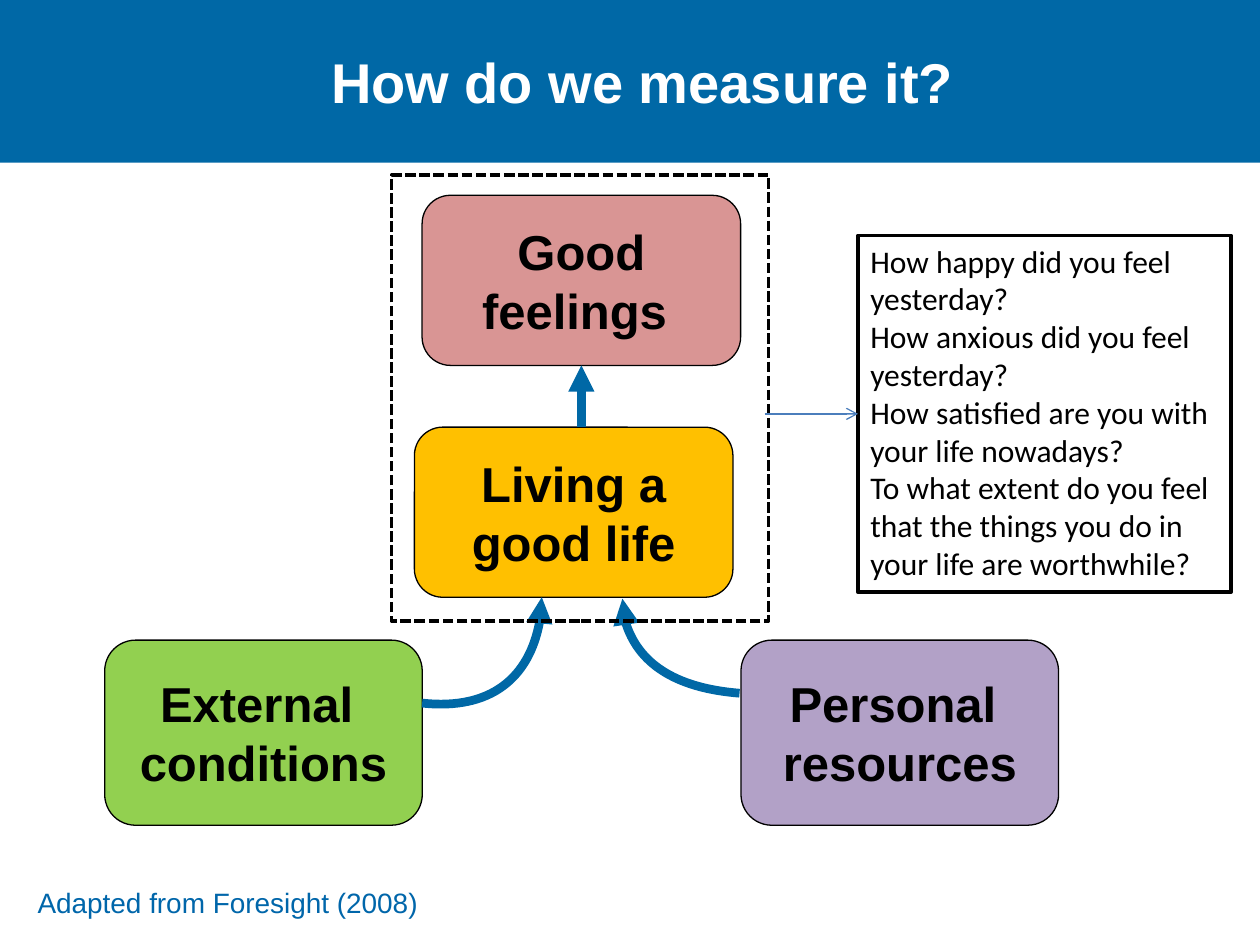
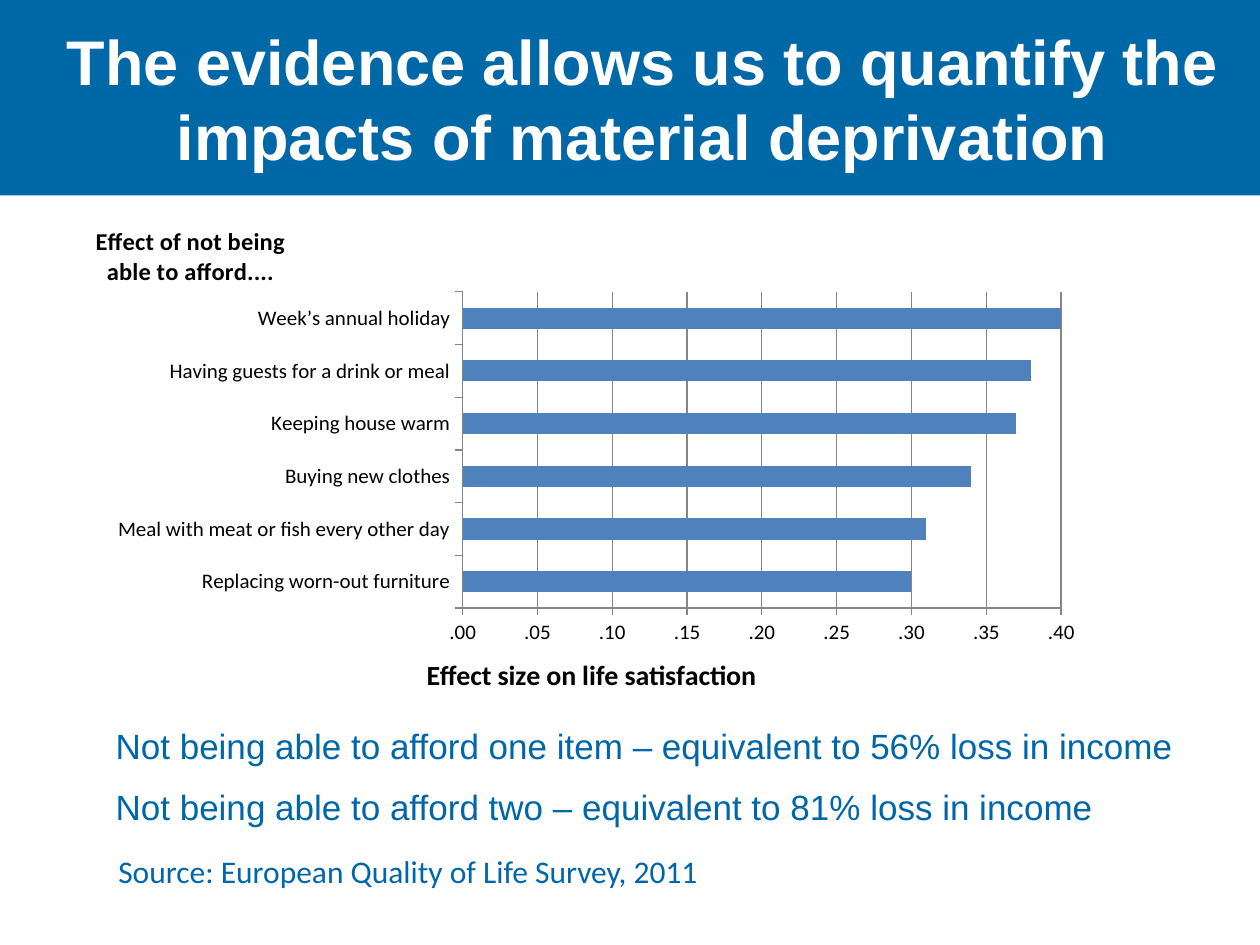
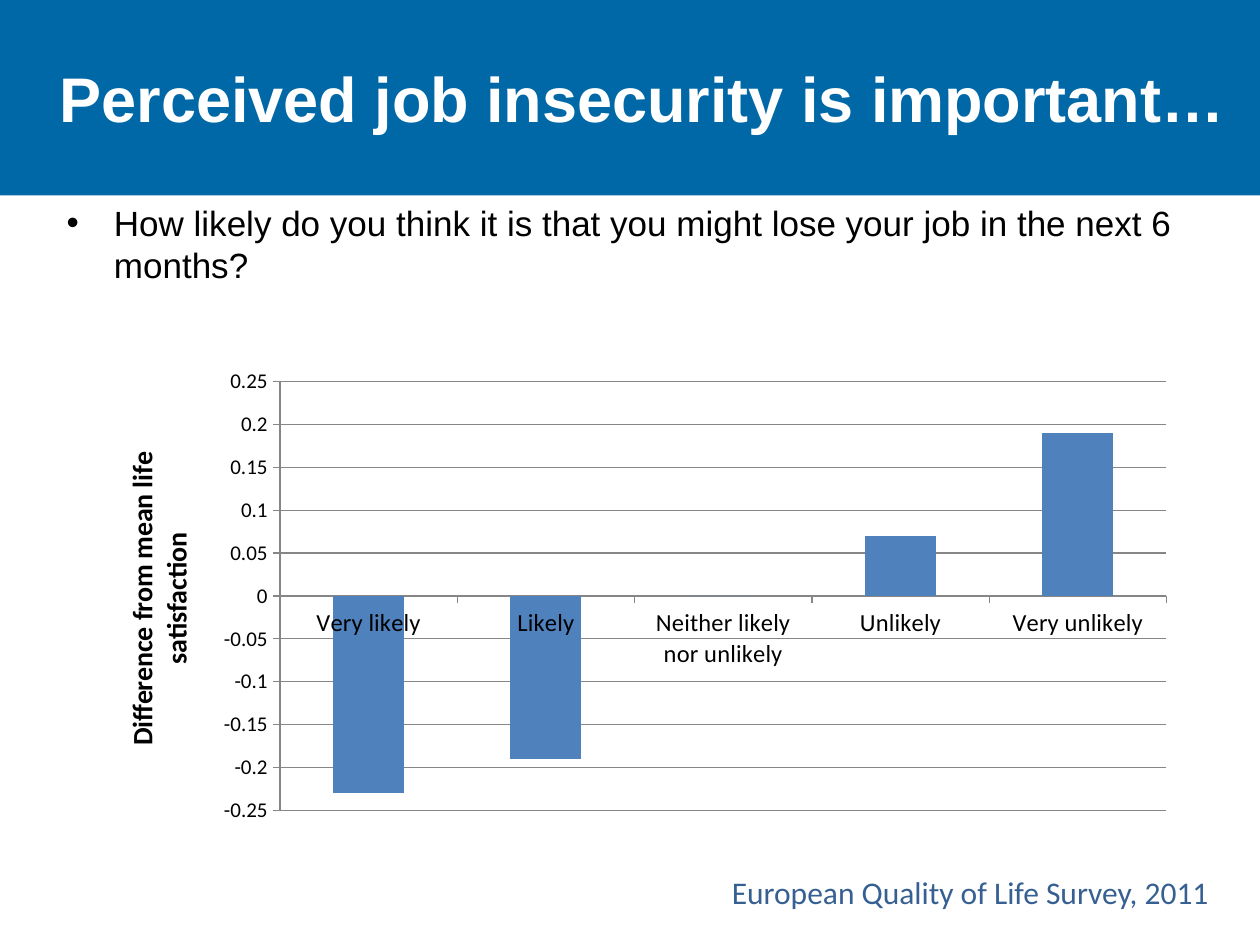
from lxml import etree
from pptx import Presentation
from pptx.chart.data import CategoryChartData
from pptx.dml.color import RGBColor
from pptx.enum.chart import XL_CHART_TYPE, XL_TICK_MARK
from pptx.enum.dml import MSO_LINE
from pptx.enum.shapes import MSO_CONNECTOR, MSO_SHAPE
from pptx.enum.text import MSO_ANCHOR, PP_ALIGN
from pptx.oxml.ns import qn
from pptx.util import Pt

RECT, ROUND = MSO_SHAPE.RECTANGLE, MSO_SHAPE.ROUNDED_RECTANGLE
STRAIGHT, DASH = MSO_CONNECTOR.STRAIGHT, MSO_LINE.SQUARE_DOT
TOP, MIDDLE = MSO_ANCHOR.TOP, MSO_ANCHOR.MIDDLE
LEFT, CENTER = PP_ALIGN.LEFT, PP_ALIGN.CENTER
BAR, COLUMN = XL_CHART_TYPE.BAR_CLUSTERED, XL_CHART_TYPE.COLUMN_CLUSTERED
OUTSIDE, NO_TICK = XL_TICK_MARK.OUTSIDE, XL_TICK_MARK.NONE

BAND, NOTE, SOURCE = "0068A6", "0066AA", "376092"
BLACK, WHITE, GRID, SERIES, LINK = "000000", "FFFFFF", "868686", "4F81BD", "4B7EBC"
HEAD = {"name": "Arial", "size": Pt(36), "bold": True}
BOX_FONT = {"name": "Arial", "size": Pt(28), "bold": True}
BODY = {"name": "Arial", "size": Pt(20)}
SMALL = {"name": "Calibri", "size": Pt(18)}
CENTERED = {"alignment": CENTER}


def rgb(value):
    """Turn a hex string into a colour."""
    return RGBColor.from_string(value)


def apply(target, values):
    """Set each named attribute on the target."""
    for name, value in values.items():
        setattr(target, name, value)


def write(sp, lines, font, color, para=None, frame=None):
    """Fill a shape with one paragraph per line."""
    tf = sp.text_frame
    apply(tf, {"word_wrap": True, **(frame or {})})
    for i, line in enumerate(lines):
        p = tf.add_paragraph() if i else tf.paragraphs[0]
        apply(p, para or {})
        r = p.add_run()
        r.text = line
        apply(r.font, font)
        r.font.color.rgb = rgb(color)


def box(s, kind, at, fill=None, line=None, width=0.75):
    """Add a preset shape with the given fill and outline."""
    sp = s.shapes.add_shape(kind, *map(Pt, at))
    sp.shadow.inherit = False
    if fill:
        sp.fill.solid()
        sp.fill.fore_color.rgb = rgb(fill)
    else:
        sp.fill.background()
    if line:
        sp.line.color.rgb = rgb(line)
        sp.line.width = Pt(width)
    else:
        sp.line.fill.background()
    return sp


def text(s, at, lines, font, color, para=None):
    """Add a text box."""
    sp = s.shapes.add_textbox(*map(Pt, at))
    write(sp, lines, font, color, para)
    return sp


def title(s, words, height=111.6, size=36):
    """Add the blue title band."""
    sp = box(s, RECT, (0, 0, 734.4, height), BAND)
    write(sp, [words], {**HEAD, "size": Pt(size)}, WHITE, CENTERED,
          {"vertical_anchor": MIDDLE})


def arrow_line(sp, color, width, head):
    """Style a line and put an arrowhead at its end."""
    sp.line.color.rgb = rgb(color)
    sp.line.width = Pt(width)
    etree.SubElement(sp.line._get_or_add_ln(), qn("a:tailEnd"), type=head)


def arrow(s, start, end, color, width, head, target, site):
    """Add a straight arrow joined to its target."""
    sp = s.shapes.add_connector(STRAIGHT, *map(Pt, start + end))
    sp.end_connect(target, site)
    arrow_line(sp, color, width, head)
    etree.SubElement(sp._element.spPr, qn("a:effectLst"))


def curve(s, start, *points):
    """Add a curved arrow from a start, two control points and an end."""
    fb = s.shapes.build_freeform(*map(Pt, start), scale=1.0)
    fb.add_line_segments([tuple(map(Pt, pt)) for pt in points], close=False)
    sp = fb.convert_to_shape()
    sp.shadow.inherit = False
    sp.fill.background()
    outline = sp._element.find(".//" + qn("a:path"))
    bezier = etree.SubElement(outline, qn("a:cubicBezTo"))
    for segment in outline.findall(qn("a:lnTo")):
        bezier.append(segment[0])
        outline.remove(segment)
    arrow_line(sp, BAND, 5, "triangle")


def diagram(s, x, y):
    """Draw the wellbeing model with its dashed frame at its top centre."""
    specs = [
        (["Good feelings "], 194.4, 11.5, 182, 97.2, "D99594", {}),
        (["Living a good life"], 190, 144, 182, 97.2, "FFC000",
         {"margin_left": 0, "margin_right": 0}),
        (["Personal ", "resources"], 376.6, 265.7, 181.5, 105.8, "B2A1C7", {}),
        (["External ", "conditions"], 13, 265.7, 181.5, 105.8, "92D050", {}),
    ]
    boxes = []
    for lines, dx, dy, w, h, fill, margins in specs:
        sp = box(s, ROUND, (x + dx, y + dy, w, h), fill, BLACK)
        write(sp, lines, BOX_FONT, BLACK, CENTERED,
              {"vertical_anchor": MIDDLE, **margins})
        boxes.append(sp)
    curves = [
        [(194.4, 301.7), (234, 306), (262.8, 281.5), (262.8, 241.2)],
        [(375.8, 296), (338, 293), (308, 272), (308.9, 242)],
    ]
    for points in curves:
        curve(s, *[(x + dx, y + dy) for dx, dy in points])
    arrow(s, (x + 285.4, y + 144), (x + 285.4, y + 108.7), BAND, 5,
          "triangle", boxes[0], 2)
    frame = box(s, RECT, (x + 177, y, 215.3, 254.9), None, BLACK, 2)
    frame.line.dash_style = DASH


def questions(s, x, y, w, h):
    """Add the survey questions and the arrow that leads to them."""
    sp = box(s, RECT, (x, y, w, h), None, BLACK, 2.25)
    write(sp, [
        "How happy did you feel yesterday?",
        "How anxious did you feel yesterday?",
        "How satisfied are you with your life nowadays?",
        "To what extent do you feel that the things you do in your life are worthwhile?",
    ], SMALL, BLACK, {"alignment": LEFT}, {"vertical_anchor": TOP})
    middle = y + h / 2
    arrow(s, (x - 53.3, middle), (x, middle), LINK, 0.75, "arrow", sp, 1)


def layout(parent, index, **values):
    """Give a chart part a manual layout."""
    for old in parent.findall(qn("c:layout")):
        parent.remove(old)
    el = etree.Element(qn("c:layout"))
    parent.insert(index, el)
    manual = etree.SubElement(el, qn("c:manualLayout"))
    for name, value in values.items():
        etree.SubElement(manual, qn("c:" + name), val=str(value))


def axis_title(axis, words, size, x, y, turn=0):
    """Add a bold axis title at a fraction of the chart area."""
    tf = axis.axis_title.text_frame
    r = tf.paragraphs[0].add_run()
    r.text = words
    apply(r.font, {"name": "Calibri", "size": Pt(size), "bold": True})
    r.font.color.rgb = rgb(BLACK)
    el = axis.axis_title._element
    body = el.find(".//" + qn("a:bodyPr"))
    body.set("rot", str(turn * 60000))
    body.set("vert", "horz")
    layout(el, 1, xMode="edge", yMode="edge", x=x, y=y)


def bar_chart(s, at, kind, data, plot, scale, fmt, cat_size):
    """Add a single-series chart and return it."""
    cd = CategoryChartData()
    cd.categories = list(data)
    cd.add_series("Series 1", list(data.values()))
    chart = s.shapes.add_chart(kind, *map(Pt, at), cd).chart
    apply(chart, {"has_title": False, "has_legend": False})
    apply(chart.font, {"name": "Calibri", "size": Pt(10)})
    chart.font.color.rgb = rgb(BLACK)
    bars = chart.plots[0]
    apply(bars, {"gap_width": 150, "vary_by_categories": False})
    series = bars.series[0]
    series.invert_if_negative = False
    series.format.fill.solid()
    series.format.fill.fore_color.rgb = rgb(SERIES)
    cat, val = chart.category_axis, chart.value_axis
    apply(cat, {"has_major_gridlines": False})
    apply(val, {"has_major_gridlines": True, "major_unit": 0.05, **scale})
    apply(val.tick_labels, {"number_format": fmt, "number_format_is_linked": False})
    for axis, size in ((cat, cat_size), (val, 12)):
        apply(axis, {"major_tick_mark": OUTSIDE, "minor_tick_mark": NO_TICK})
        axis.tick_labels.font.size = Pt(size)
    for part in (cat, val, val.major_gridlines):
        part.format.line.color.rgb = rgb(GRID)
        part.format.line.width = Pt(0.75)
    x, y, w, h = plot
    layout(chart._chartSpace.find(".//" + qn("c:plotArea")), 0,
           layoutTarget="inner", xMode="edge", yMode="edge", x=x, y=y, w=w, h=h)
    return chart


def measure_slide(s):
    """Build the slide on measuring wellbeing."""
    title(s, "How do we measure it?", 92.9, 32)
    diagram(s, 46.8, 100.1)
    text(s, (14.4, 502.6, 629, 26.6), ["Adapted from Foresight (2008)"],
         {**BODY, "size": Pt(16)}, NOTE)
    questions(s, 490.3, 134.6, 213.1, 203.8)


def deprivation_slide(s):
    """Build the slide on material deprivation."""
    title(s, "The evidence allows us to quantify the impacts of material deprivation")
    data = {
        "Replacing worn-out furniture": 0.3,
        "Meal with meat or fish every other day": 0.31,
        "Buying new clothes": 0.34,
        "Keeping house warm": 0.37,
        "Having guests for a drink or meal": 0.38,
        "Week’s annual holiday": 0.4,
    }
    chart = bar_chart(s, (46.2, 123, 589.7, 277.9), BAR, data,
                      (0.37, 0.16, 0.58, 0.66),
                      {"minimum_scale": 0, "maximum_scale": 0.4}, "####.00", 12)
    axis_title(chart.category_axis, "Effect of not being able to afford....",
               14, 0.01, 0.01)
    axis_title(chart.value_axis, "Effect size on life satisfaction", 16, 0.33, 0.91)
    text(s, (60.5, 483.1, 471.6, 36.7),
         ["Source: European Quality of Life Survey, 2011"], SMALL, NOTE)
    text(s, (59, 410.4, 640, 67.7), [
        "Not being able to afford one item – equivalent to 56% loss in income",
        "Not being able to afford two – equivalent to 81% loss in income",
    ], BODY, NOTE, {"space_before": Pt(11)})


def insecurity_slide(s):
    """Build the slide on job insecurity."""
    title(s, "Perceived job insecurity is important…")
    sp = text(s, (31, 111.6, 674.6, 90.7), [
        "How likely do you think it is that you might lose your job in the next 6 months?",
    ], BODY, BLACK, {"space_before": Pt(4)})
    pPr = sp.text_frame.paragraphs[0]._p.get_or_add_pPr()
    pPr.set("marL", str(Pt(27)))
    pPr.set("indent", str(-Pt(27)))
    etree.SubElement(pPr, qn("a:buFont"), typeface="Arial")
    etree.SubElement(pPr, qn("a:buChar"), char="•")
    text(s, (411.1, 495.4, 297.4, 28.8),
         ["European Quality of Life Survey, 2011"], SMALL, SOURCE)
    data = {
        "Very likely": -0.23,
        "Likely": -0.19,
        "Neither likely nor unlikely": 0,
        "Unlikely": 0.07,
        "Very unlikely": 0.19,
    }
    chart = bar_chart(s, (61.2, 207.4, 617.8, 266.4), COLUMN, data,
                      (0.16, 0.04, 0.82, 0.92),
                      {"minimum_scale": -0.25, "maximum_scale": 0.25}, "General", 14)
    axis_title(chart.value_axis, "Difference from mean life satisfaction",
               16, 0.01, 0.18, -90)


def main():
    """Build and save the presentation."""
    prs = Presentation()
    apply(prs, {"slide_width": Pt(720), "slide_height": Pt(540)})
    for build in (measure_slide, deprivation_slide, insecurity_slide):
        build(prs.slides.add_slide(prs.slide_layouts[6]))
    prs.save("out.pptx")


if __name__ == "__main__":
    main()
